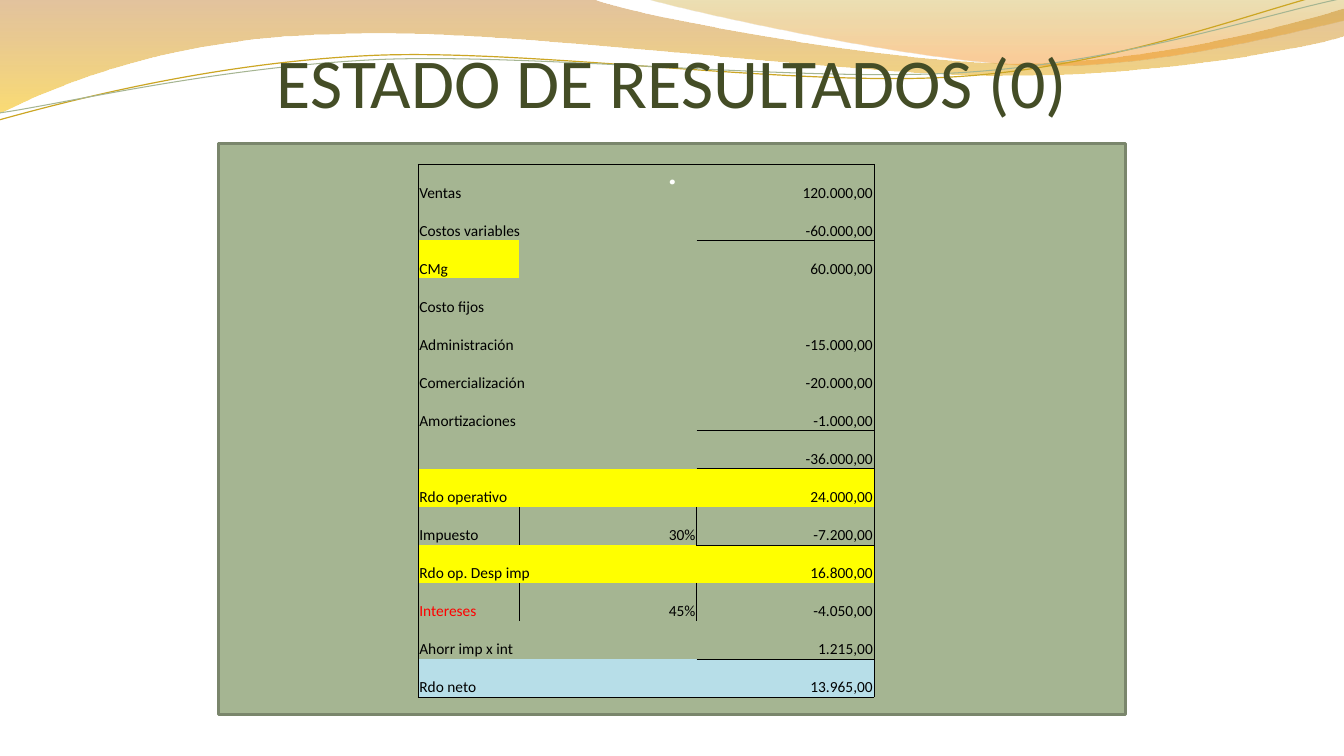
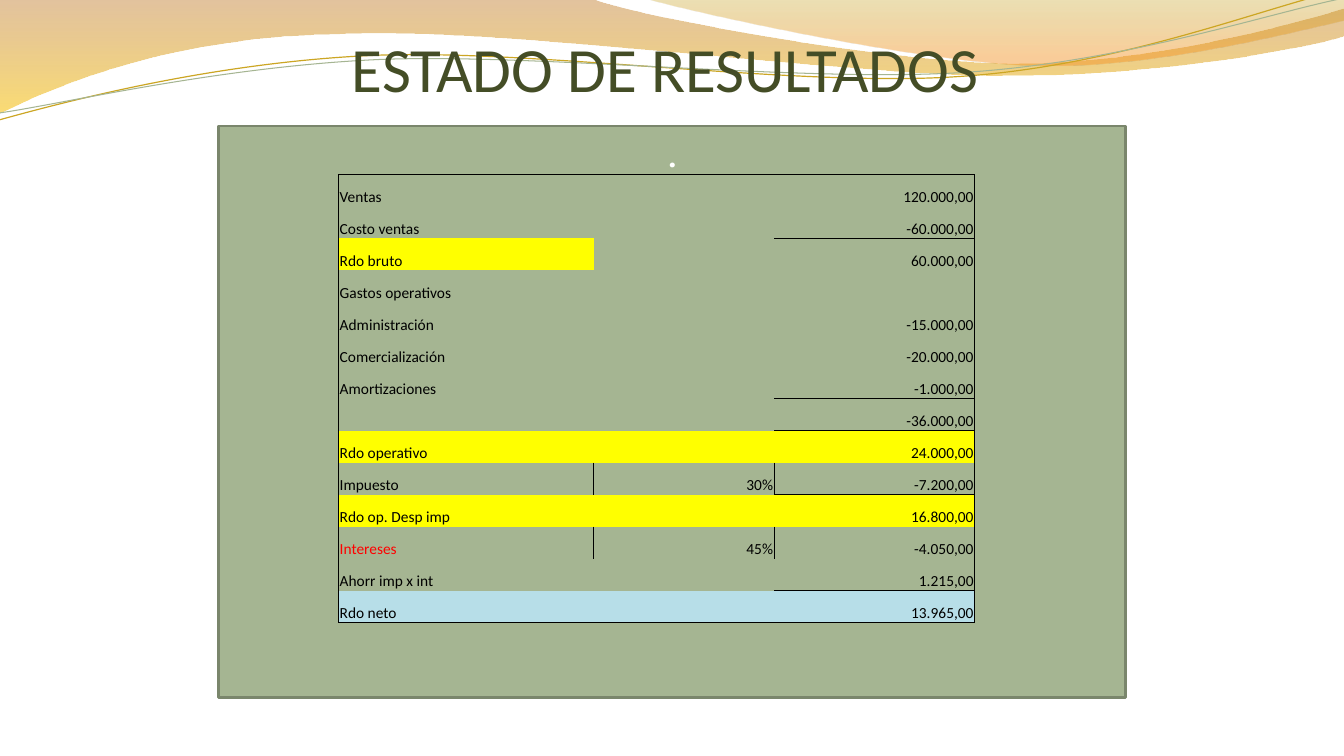
from lxml.etree import SubElement
from pptx import Presentation
from pptx.dml.color import RGBColor
from pptx.enum.text import MSO_ANCHOR, MSO_AUTO_SIZE, PP_ALIGN
from pptx.oxml import parse_xml
from pptx.oxml.ns import nsdecls, qn
from pptx.util import Inches, Pt

COLORS = {
    "title": "444D26", "panel": "A5B592", "panel_edge": "7A866C",
    "white": "FFFFFF", "ink": "000000", "alert": "FF0000",
    "result": "FFFF00", "net": "B7DEE8", "gold": "CCA624",
    "brown": "C07A28", "amber": "F7BF00", "olive": "C09709", "orange": "F59320",
}

BANDS = [
    ([(0, 0), (5.87, -0.01), (6.34, 0.17, 8.85, 0.63, 10.11, 0.63),
      (11.38, 0.63, 12.78, 0.26, 13.33, 0.09), (13.35, 0.36),
      (13.11, 0.44, 11.6, 0.76, 9.94, 0.75), (8.29, 0.75, 5.09, 0.28, 3.43, 0.34),
      (1.72, 0.36, 0.61, 0.83, -0.01, 1.13), (0, 0)],
     [("brown", 0, 45), ("amber", 1, 55)]),
    ([(6.39, -0.01), (6.79, 0.11, 9.09, 0.62, 10.25, 0.65),
      (11.41, 0.69, 12.82, 0.32, 13.33, 0.21), (13.33, 0), (6.39, -0.01)],
     [("olive", 0, 30), ("orange", 0.8, 45)]),
]
THREADS = [
    ([(-0.01, 1.19), (0.64, 1.01, 2.11, 0.62, 3.69, 0.55),
      (5.27, 0.48, 7.9, 0.87, 9.5, 0.76), (11.1, 0.66, 12.52, 0.08, 13.31, -0.1)],
     "gold", 0.85),
    ([(0, 1.12), (0.63, 1.03, 2.18, 0.66, 3.78, 0.59),
      (5.37, 0.53, 7.96, 0.82, 9.55, 0.72), (11.15, 0.62, 12.55, 0.14, 13.34, -0.02)],
     "panel", 0.75),
]

SUBTOTALED = {1, 6, 7, 9, 12}
MERGED = {1, 4, 5, 6, 8, 10, 12}


def statement(cost, margin, expenses):
    """Return the rows of an income statement as label, rate and amount."""
    return [
        ("Ventas", "", "120.000,00"),
        (cost, "", "-60.000,00"),
        (margin, "", "60.000,00"),
        (expenses, "", ""),
        ("Administración", "", "-15.000,00"),
        ("Comercialización", "", "-20.000,00"),
        ("Amortizaciones", "", "-1.000,00"),
        ("", "", "-36.000,00"),
        ("Rdo operativo", "", "24.000,00"),
        ("Impuesto", "30%", "-7.200,00"),
        ("Rdo op. Desp imp", "", "16.800,00"),
        ("Intereses", "45%", "-4.050,00"),
        ("Ahorr imp x int", "", "1.215,00"),
        ("Rdo neto", "", "13.965,00"),
    ]


class Deck:
    """Holds the style, the one-inch grid and the current slide."""

    columns, rows = 40 / 3, 7.5
    cell = Inches(1)
    font = "Calibri"

    def __init__(self):
        self.prs = Presentation()
        self.prs.slide_width = self.grid(self.columns)
        self.prs.slide_height = self.grid(self.rows)
        self.layout = self.prs.slide_layouts[1]
        self.slide = None

    def grid(self, length):
        return round(length * self.cell)

    def color(self, name):
        return RGBColor.from_string(COLORS[name])

    def add_slide(self):
        first = self.slide is None
        self.slide = self.prs.slides.add_slide(self.layout)
        if first:
            self.waves()

    def place(self, shape, box):
        shape.left, shape.top, shape.width, shape.height = map(self.grid, box)

    def style(self, paragraph, size, color, align, font=None):
        paragraph.alignment = align
        for run in paragraph.runs:
            run.font.name = font or self.font
            run.font.size = Pt(size)
            run.font.color.rgb = self.color(color)

    def outline(self, steps, closed):
        points = [tuple(map(self.grid, step[i:i + 2]))
                  for step in steps for i in range(0, len(step), 2)]
        builder = self.slide.shapes.build_freeform(*points[0])
        builder.add_line_segments(points[1:], close=closed)
        wave = builder.convert_to_shape()
        wave.shadow.inherit = False
        self.bend(wave, steps)
        return wave

    def bend(self, wave, steps):
        segments = iter(list(wave.element.iter(qn("a:lnTo"))))
        for step in steps[1:]:
            group = [next(segments) for _ in range(len(step) // 2)]
            if len(group) == 3:
                bezier = parse_xml(f'<a:cubicBezTo {nsdecls("a")}/>')
                group[0].addprevious(bezier)
                for segment in group:
                    bezier.append(segment[0])
                    segment.getparent().remove(segment)

    def waves(self):
        backdrop = self.layout.shapes.element
        for steps, stops in BANDS:
            band = self.outline(steps, True)
            band.fill.gradient()
            band.fill.gradient_angle = 270
            for stop, (name, position, _) in zip(band.fill.gradient_stops, stops):
                stop.color.rgb = self.color(name)
                stop.position = position
            for tone, (_, _, opacity) in zip(band.element.iter(qn("a:srgbClr")), stops):
                SubElement(tone, qn("a:alpha")).set("val", str(opacity * 1000))
            band.line.fill.background()
            backdrop.append(band.element)
        for steps, name, width in THREADS:
            thread = self.outline(steps, False)
            thread.fill.background()
            thread.line.color.rgb = self.color(name)
            thread.line.width = Pt(width)
            backdrop.append(thread.element)

    def title(self, text, height, size):
        heading = self.slide.shapes.title
        self.place(heading, (2.17, 0.19, 9, height))
        frame = heading.text_frame
        frame.text = text
        frame.auto_size = MSO_AUTO_SIZE.NONE
        frame.vertical_anchor = MSO_ANCHOR.BOTTOM
        frame.margin_left = frame.margin_right = frame.margin_bottom = 0
        frame.margin_top = self.grid(0.05)
        self.style(frame.paragraphs[0], size, "title", PP_ALIGN.CENTER)

    def panel(self, text, top):
        panel = self.slide.placeholders[1]
        self.place(panel, (2.17, top, 9, 5.67))
        panel.fill.solid()
        panel.fill.fore_color.rgb = self.color("panel")
        panel.line.color.rgb = self.color("panel_edge")
        panel.line.width = Pt(2)
        frame = panel.text_frame
        frame.text = text
        frame.auto_size = MSO_AUTO_SIZE.NONE
        paragraph = frame.paragraphs[0]
        self.style(paragraph, 26, "white", PP_ALIGN.CENTER, "Vollkorn")
        properties = paragraph._p.get_or_add_pPr()
        properties.set("marL", str(self.grid(0.3)))
        properties.set("indent", str(self.grid(-0.3)))
        SubElement(properties, qn("a:buNone"))

    def borders(self, cell, ruled):
        properties = cell._tc.get_or_add_tcPr()
        ink = f'<a:solidFill><a:srgbClr val="{COLORS["ink"]}"/></a:solidFill>'
        for position, side in enumerate("LRTB"):
            paint = ink if ruled[side] else "<a:noFill/>"
            properties.insert(position, parse_xml(
                f'<a:ln{side} {nsdecls("a")} w="{Pt(0.5)}">{paint}</a:ln{side}>'))

    def ruled(self, row, column, last, rated):
        return {
            "L": column == 0 or rated,
            "R": column == 2 or rated,
            "T": row == 0 or (column == 2 and row - 1 in SUBTOTALED),
            "B": row == last or (column == 2 and row in SUBTOTALED),
        }

    def tone(self, row, column):
        if row in (8, 10) or (row, column) == (2, 0):
            return "result"
        return "net" if row == 13 else None

    def table(self, entries, left, top, widths, height, merged):
        box = map(self.grid, (left, top, sum(widths), height))
        table = self.slide.shapes.add_table(len(entries), len(widths), *box).table
        table.first_row = table.horz_banding = False
        table._tbl.tblPr.find(qn("a:tableStyleId")).text = (
            "{2D5ABB26-0587-4C30-8999-92F81FD0307C}")
        last = len(entries) - 1
        for column, width in zip(table.columns, widths):
            column.width = self.grid(width)
        for row, entry in enumerate(entries):
            table.rows[row].height = self.grid(height / len(entries))
            for column, text in enumerate(entry):
                cell = table.cell(row, column)
                cell.text = text
                cell.vertical_anchor = MSO_ANCHOR.BOTTOM
                cell.margin_left = cell.margin_right = cell.margin_top = self.grid(0.01)
                cell.margin_bottom = 0
                color = "alert" if text == "Intereses" else "ink"
                align = PP_ALIGN.RIGHT if column else PP_ALIGN.LEFT
                self.style(cell.text_frame.paragraphs[0], 11, color, align)
                tone = self.tone(row, column)
                if tone:
                    cell.fill.solid()
                    cell.fill.fore_color.rgb = self.color(tone)
                else:
                    cell.fill.background()
                self.borders(cell, self.ruled(row, column, last, bool(entry[1])))
            if row in merged:
                table.cell(row, 0).merge(table.cell(row, 1))


def main():
    deck = Deck()

    deck.add_slide()
    deck.title("ESTADO DE RESULTADOS (0)", 1.03, 50)
    deck.panel(".", 1.42)
    deck.table(statement("Costos variables", "CMg", "Costo fijos"),
               4.15, 1.63, (1, 1.76, 1.76), 5.29, MERGED)

    deck.add_slide()
    deck.title("ESTADO DE RESULTADOS ", 0.85, 45)
    deck.panel(".", 1.25)
    deck.table(statement("Costo ventas", "Rdo bruto", "Gastos operativos"),
               3.36, 1.73, (2.53, 1.79, 1.99), 4.45, MERGED | {3})

    deck.prs.save("out.pptx")


if __name__ == "__main__":
    main()
